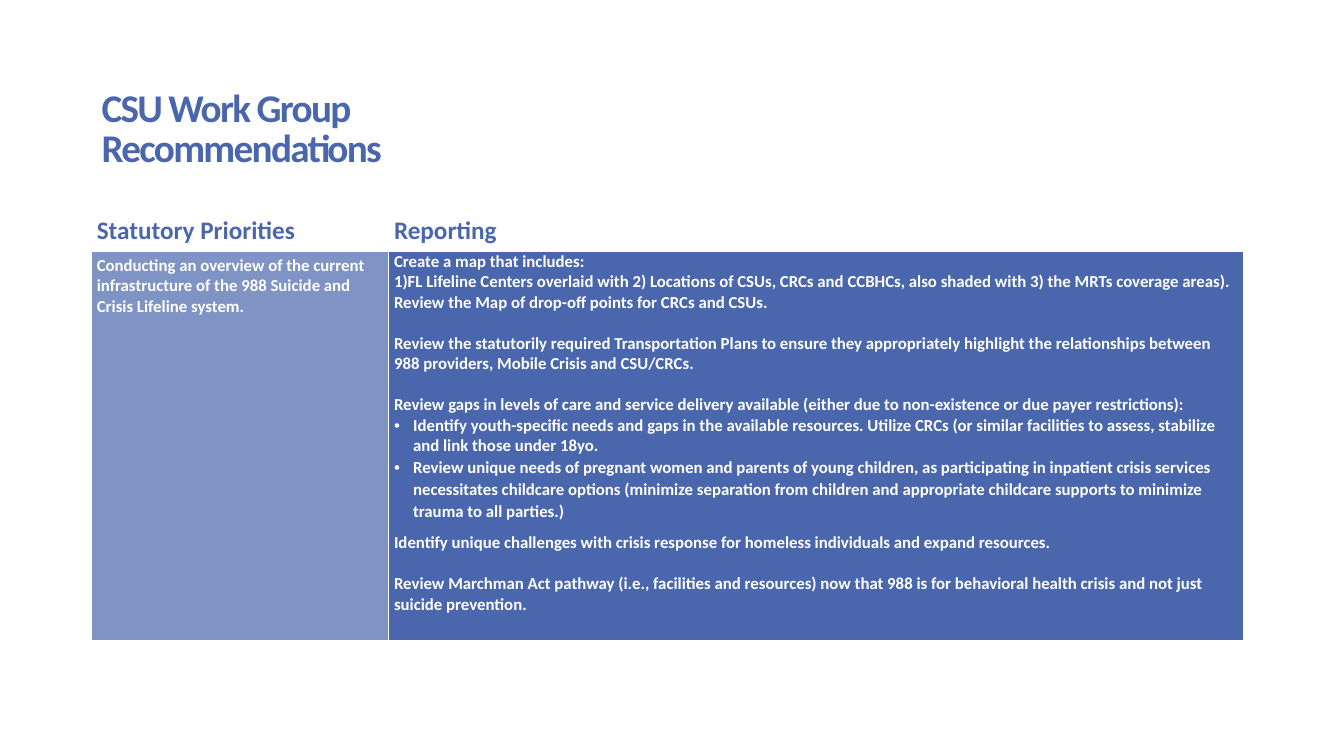
from lxml import etree
from pptx import Presentation
from pptx.dml.color import RGBColor
from pptx.enum.text import MSO_ANCHOR
from pptx.oxml.ns import qn
from pptx.util import Cm, Pt

BLUE = RGBColor(0x4A, 0x66, 0xAC)
WHITE = RGBColor(0xFF, 0xFF, 0xFF)
TOP, MIDDLE = MSO_ANCHOR.TOP, MSO_ANCHOR.MIDDLE
GAP = {"space_before": Pt(14.65)}
BULLET = {"bullet": True}
LAST_BULLET = {"bullet": True, "line_spacing": 1.07, "space_after": Pt(8)}

HEADINGS = ["Statutory Priorities", "Reporting"]
PRIORITY = (
    "Conducting an overview of the current infrastructure of the 988 Suicide "
    "and Crisis Lifeline system."
)
REPORTING = [
    ("Create a map that includes:", {}),
    ("1)FL Lifeline Centers overlaid with 2) Locations of CSUs, CRCs and CCBHCs, "
     "also shaded with 3) the MRTs coverage areas). Review the Map of drop-off "
     "points for CRCs and CSUs.", {}),
    ("Review the statutorily required Transportation Plans to ensure they "
     "appropriately highlight the relationships between 988 providers, Mobile "
     "Crisis and CSU/CRCs.", GAP),
    ("Review gaps in levels of care and service delivery available (either due to "
     "non-existence or due payer restrictions):", GAP),
    ("Identify youth-specific needs and gaps in the available resources. Utilize "
     "CRCs (or similar facilities to assess, stabilize and link those under 18yo.",
     BULLET),
    ("Review unique needs of pregnant women and parents of young children, as "
     "participating in inpatient crisis services necessitates childcare options "
     "(minimize separation from children and appropriate childcare supports to "
     "minimize trauma to all parties.)", LAST_BULLET),
    ("Identify unique challenges with crisis response for homeless individuals "
     "and expand resources.", {}),
    ("Review Marchman Act pathway (i.e., facilities and resources) now that 988 is "
     "for behavioral health crisis and not just suicide prevention.", GAP),
]


def write(frame, paragraphs, size, color):
    """Fill a text frame with bold paragraphs, each with its own format."""
    for index, (text, formats) in enumerate(paragraphs):
        para = frame.paragraphs[0] if index == 0 else frame.add_paragraph()
        span = para.add_run()
        span.text = text
        font = {"name": "Calibri", "size": Pt(size), "bold": True}
        for name, value in font.items():
            setattr(span.font, name, value)
        span.font.color.rgb = color
        for name, value in formats.items():
            if name != "bullet":
                setattr(para, name, value)
                continue
            properties = para._p.get_or_add_pPr()
            properties.set("marL", str(Cm(0.48)))
            properties.set("indent", str(-Cm(0.48)))
            etree.SubElement(properties, qn("a:buFont"), typeface="Arial")
            etree.SubElement(properties, qn("a:buChar"), char="•")


def add_borders(cell, sides):
    """Draw white one-point lines; sides come in the order L, R, T, B."""
    properties = cell._tc.get_or_add_tcPr()
    for position, side in enumerate(sides):
        line = etree.Element(qn(f"a:ln{side}"), w=str(Pt(1)))
        fill = etree.SubElement(line, qn("a:solidFill"))
        etree.SubElement(fill, qn("a:srgbClr"), val=str(WHITE))
        properties.insert(position, line)


deck = Presentation()
deck.slide_width, deck.slide_height = Cm(33.87), Cm(19.05)
page = deck.slides.add_slide(deck.slide_layouts[6])

# Title
box = page.shapes.add_textbox(Cm(2.31), Cm(2.16), Cm(13.31), Cm(1.55))
box.text_frame.word_wrap = True
box.text_frame.vertical_anchor = TOP
write(box.text_frame, [("CSU Work Group Recommendations", {"line_spacing": 0.85})],
      28, BLUE)
title_span = box.text_frame.paragraphs[0].runs[0]
title_span.font._element.set("spc", "-120")

# Table frame
column_widths = [Cm(7.49), Cm(21.54)]
row_heights = [Cm(1.02), Cm(9.8)]
table = page.shapes.add_table(2, 2, Cm(2.31), Cm(5.31),
                              sum(column_widths), sum(row_heights)).table
table.first_row = False
table.horz_banding = False
for column, width in zip(table.columns, column_widths):
    column.width = width
for row, height in zip(table.rows, row_heights):
    row.height = height

# Table cells
contents = [[[(heading, {})] for heading in HEADINGS], [[(PRIORITY, {})], REPORTING]]
narrow = {"margin_left": Cm(0.13), "margin_right": Cm(0.08),
          "margin_top": Cm(0.1), "margin_bottom": Cm(0.1)}
wide = {"margin_left": Cm(0.13), "margin_right": Cm(0.13),
        "margin_top": Cm(0), "margin_bottom": Cm(0.15)}
for row_index, row_contents in enumerate(contents):
    is_header = row_index == 0
    for column_index, paragraphs in enumerate(row_contents):
        cell = table.cell(row_index, column_index)
        margins = wide if row_index and column_index else narrow
        for name, value in margins.items():
            setattr(cell, name, value)
        cell.vertical_anchor = MIDDLE if is_header else TOP
        cell.fill.solid()
        cell.fill.fore_color.rgb = WHITE if is_header else BLUE
        write(cell.text_frame, paragraphs, 18 if is_header else 12,
              BLUE if is_header else WHITE)
        add_borders(cell, "RL"[column_index] + "BT"[row_index])

# Lighter fill behind the priority
priority_color = table.cell(1, 0)._tc.tcPr.find(qn("a:solidFill"))[0]
etree.SubElement(priority_color, qn("a:alpha"), val="70000")

deck.save("out.pptx")
